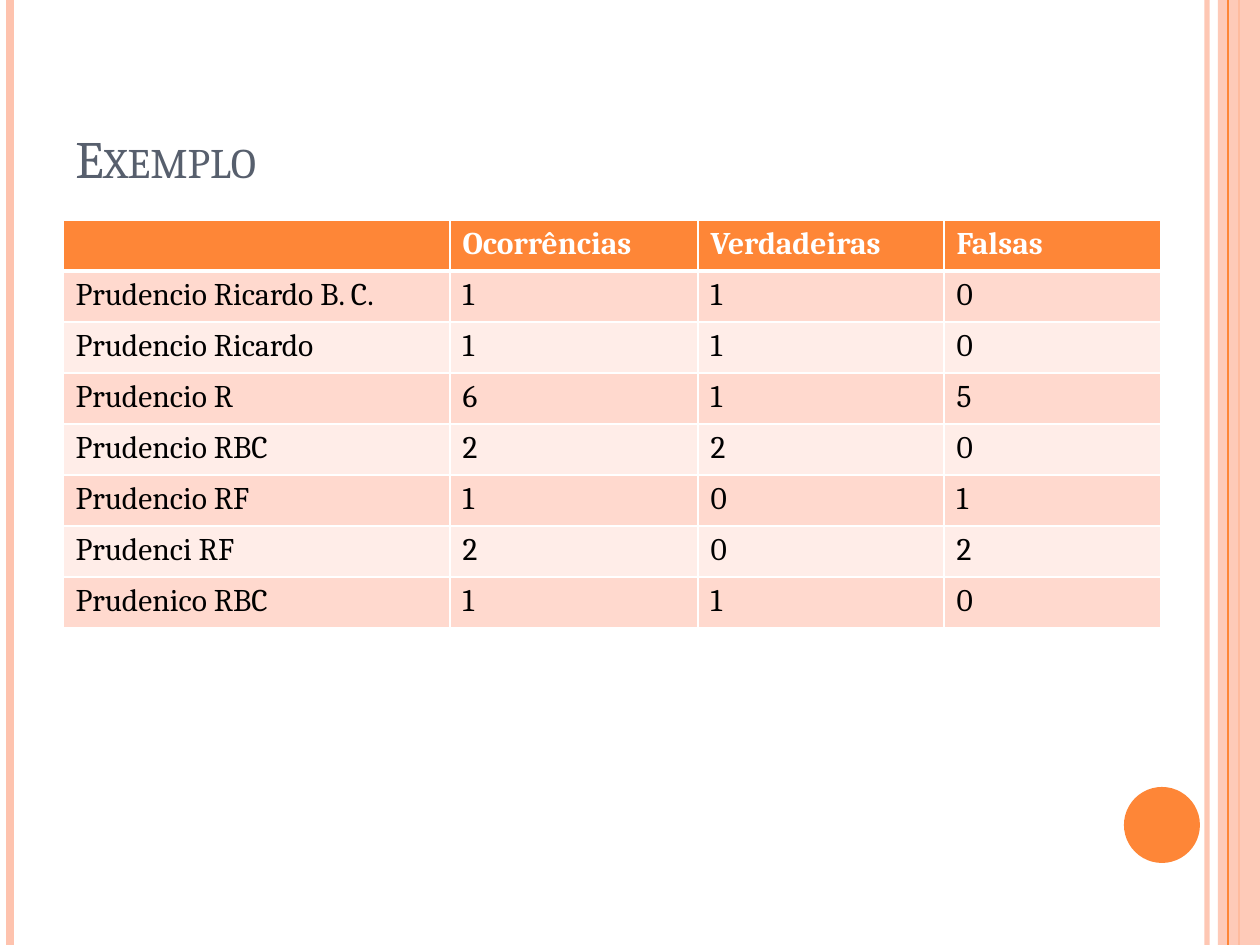
from lxml.etree import SubElement
from pptx import Presentation
from pptx.dml.color import RGBColor
from pptx.enum.shapes import MSO_CONNECTOR, MSO_SHAPE
from pptx.enum.text import MSO_ANCHOR
from pptx.oxml.ns import qn
from pptx.util import Emu, Pt

WIDE, HIGH = 1260, 945
WHITE = RGBColor(0xFF, 0xFF, 0xFF)
BLACK = RGBColor(0, 0, 0)
SLATE = RGBColor(0x57, 0x5F, 0x6D)
ORANGE = RGBColor(0xFE, 0x86, 0x37)
PEACH = RGBColor(0xFE, 0xC3, 0xAE)
BANDS = RGBColor(0xFF, 0xED, 0xE8), RGBColor(0xFF, 0xD9, 0xCE)

TITLE = {"name": "Cambria", "size": Pt(30), "bold": False}
HEAD = {"name": "Cambria", "size": Pt(18), "bold": True}
BODY = {**HEAD, "bold": False}

COLS = 387, 248, 246, 217
ROW = 51
ROWS = (
    ("", "Ocorrências", "Verdadeiras", "Falsas"),
    ("Prudencio Ricardo B. C.", "1", "1", "0"),
    ("Prudencio Ricardo", "1", "1", "0"),
    ("Prudencio R", "6", "1", "5"),
    ("Prudencio RBC", "2", "2", "0"),
    ("Prudencio RF", "1", "0", "1"),
    ("Prudenci RF", "2", "0", "2"),
    ("Prudenico RBC", "1", "1", "0"),
)


def px(num):
    return Emu(round(num * 914400 / 126))


def style(font, form, color):
    for key, value in form.items():
        setattr(font, key, value)
    font.color.rgb = color


def fade(shape, alpha):
    """Set the opacity, in percent, of the shape's colour."""
    for color in shape._element.spPr.iter(qn("a:srgbClr")):
        SubElement(color, qn("a:alpha")).set("val", str(alpha * 1000))


def add_rule(slide, x, color, width, alpha=100):
    """Draw a vertical line over the full slide height."""
    rule = slide.shapes.add_connector(
        MSO_CONNECTOR.STRAIGHT, px(x), 0, px(x), px(HIGH))
    rule.line.color.rgb = color
    rule.line.width = Pt(width)
    SubElement(rule._element.spPr, qn("a:effectLst"))
    if alpha < 100:
        fade(rule, alpha)


def add_block(slide, kind, box, color, alpha=100):
    block = slide.shapes.add_shape(kind, *map(px, box))
    block.shadow.inherit = False
    block.fill.solid()
    block.fill.fore_color.rgb = color
    block.line.fill.background()
    if alpha < 100:
        fade(block, alpha)


def add_title(slide, text, box):
    frame = slide.shapes.add_textbox(*map(px, box)).text_frame
    frame.word_wrap = True
    frame.vertical_anchor = MSO_ANCHOR.BOTTOM
    run = frame.paragraphs[0].add_run()
    run.text = text
    style(run.font, TITLE, SLATE)
    run.font._element.set("cap", "small")


def set_edges(cell, widths):
    """Give the cell white borders; they must come before its fill."""
    props = cell._tc.get_or_add_tcPr()
    for side, width in widths.items():
        edge = SubElement(props, qn(f"a:ln{side}"), w=str(Pt(width)))
        fill = SubElement(edge, qn("a:solidFill"))
        SubElement(fill, qn("a:srgbClr"), val=str(WHITE))


def fill_cell(cell, text, row):
    head = row == 0
    set_edges(cell, {"L": 1, "R": 1, "T": 3 if row == 1 else 1,
                     "B": 3 if head else 1})
    cell.fill.solid()
    cell.fill.fore_color.rgb = ORANGE if head else BANDS[row % 2]
    cell.text = text
    style(cell.text_frame.paragraphs[0].font, HEAD if head else BODY,
          WHITE if head else BLACK)


def add_grid(slide, x, y):
    grid = slide.shapes.add_table(
        len(ROWS), len(COLS), px(x), px(y),
        px(sum(COLS)), px(ROW * len(ROWS))).table
    for col, width in zip(grid.columns, COLS):
        col.width = px(width)
    for row, words in enumerate(ROWS):
        grid.rows[row].height = px(ROW)
        for col, text in enumerate(words):
            fill_cell(grid.cell(row, col), text, row)


def main():
    deck = Presentation()
    deck.slide_width, deck.slide_height = px(WIDE), px(HIGH)
    slide = deck.slides.add_slide(deck.slide_layouts[6])
    add_rule(slide, 1207, PEACH, 3, 93)
    add_rule(slide, 10, PEACH, 4.5)
    add_rule(slide, 1239, ORANGE, 1.5)
    add_block(slide, MSO_SHAPE.RECTANGLE, (1218, 0, 42, HIGH), PEACH, 87)
    add_rule(slide, 1228, ORANGE, 0.75)
    add_block(slide, MSO_SHAPE.OVAL, (1124, 787, 76, 76), ORANGE)
    add_title(slide, "Exemplo", (63, 38, 1029, 157))
    add_grid(slide, 63, 220)
    deck.save("out.pptx")


if __name__ == "__main__":
    main()
